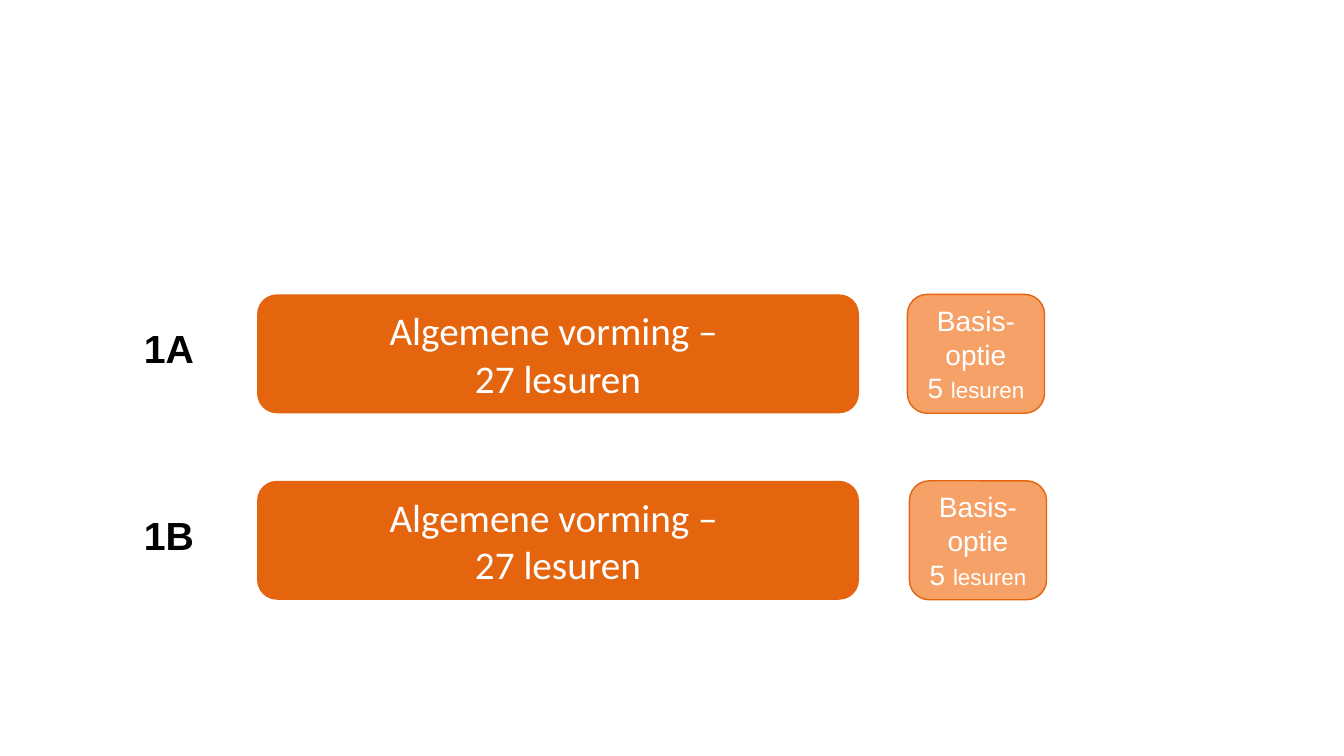
from pptx import Presentation
from pptx.dml.color import RGBColor
from pptx.enum.shapes import MSO_SHAPE
from pptx.enum.text import MSO_ANCHOR, PP_ALIGN
from pptx.util import Inches, Pt

ORANGE, LIGHT_ORANGE = "E4650E", "F6A168"
WHITE, BLACK = "FFFFFF", "000000"
ROW_HEIGHT = 1.18


def color(hex_code):
    return RGBColor.from_string(hex_code)


def style(p, name, size, hex_code, align=PP_ALIGN.CENTER):
    p.alignment = align
    p.font.name = name
    p.font.size = Pt(size)
    p.font.color.rgb = color(hex_code)


def add_block(slide, left, top, width, fill, line=None):
    """Add a rounded block of row height and return its text frame."""
    sp = slide.shapes.add_shape(MSO_SHAPE.ROUNDED_RECTANGLE, Inches(left),
                                Inches(top), Inches(width), Inches(ROW_HEIGHT))
    sp.shadow.inherit = False
    sp.fill.solid()
    sp.fill.fore_color.rgb = color(fill)
    if line:
        sp.line.color.rgb = color(line)
        sp.line.width = Pt(1)
    else:
        sp.line.fill.background()
    tf = sp.text_frame
    tf.word_wrap = True
    tf.vertical_anchor = MSO_ANCHOR.MIDDLE
    return tf


def add_label(slide, left, top, text):
    box = slide.shapes.add_textbox(Inches(left), Inches(top),
                                   Inches(1.07), Inches(0.57))
    tf = box.text_frame
    tf.word_wrap = True
    p = tf.paragraphs[0]
    p.text = text
    style(p, "Arial", 28, BLACK, PP_ALIGN.LEFT)
    p.font.bold = True


def add_general_education(slide, left, top):
    p = add_block(slide, left, top, 5.97, ORANGE).paragraphs[0]
    p.text = "Algemene vorming – \v27 lesuren"
    style(p, "Calibri", 28, WHITE)


def add_basic_option(slide, left, top):
    tf = add_block(slide, left, top, 1.36, LIGHT_ORANGE, ORANGE)
    tf.text = "Basis-optie"
    hours = tf.add_paragraph()
    hours.add_run().text = "5 "
    r = hours.add_run()
    r.text = "lesuren"
    r.font.size = Pt(16)
    for p in tf.paragraphs:
        style(p, "Arial", 20, WHITE)


def add_stream(slide, top, label, option_left):
    """Add one row: its label, general education and basic option."""
    add_label(slide, 1.33, top + 0.25, label)
    add_general_education(slide, 2.55, top)
    add_basic_option(slide, option_left, top)


def main():
    prs = Presentation()
    prs.slide_width, prs.slide_height = Inches(13.33), Inches(7.5)
    slide = prs.slides.add_slide(prs.slide_layouts[6])
    add_stream(slide, 2.92, "1A", 9)
    add_stream(slide, 4.77, "1B", 9.02)
    prs.save("out.pptx")


if __name__ == "__main__":
    main()
